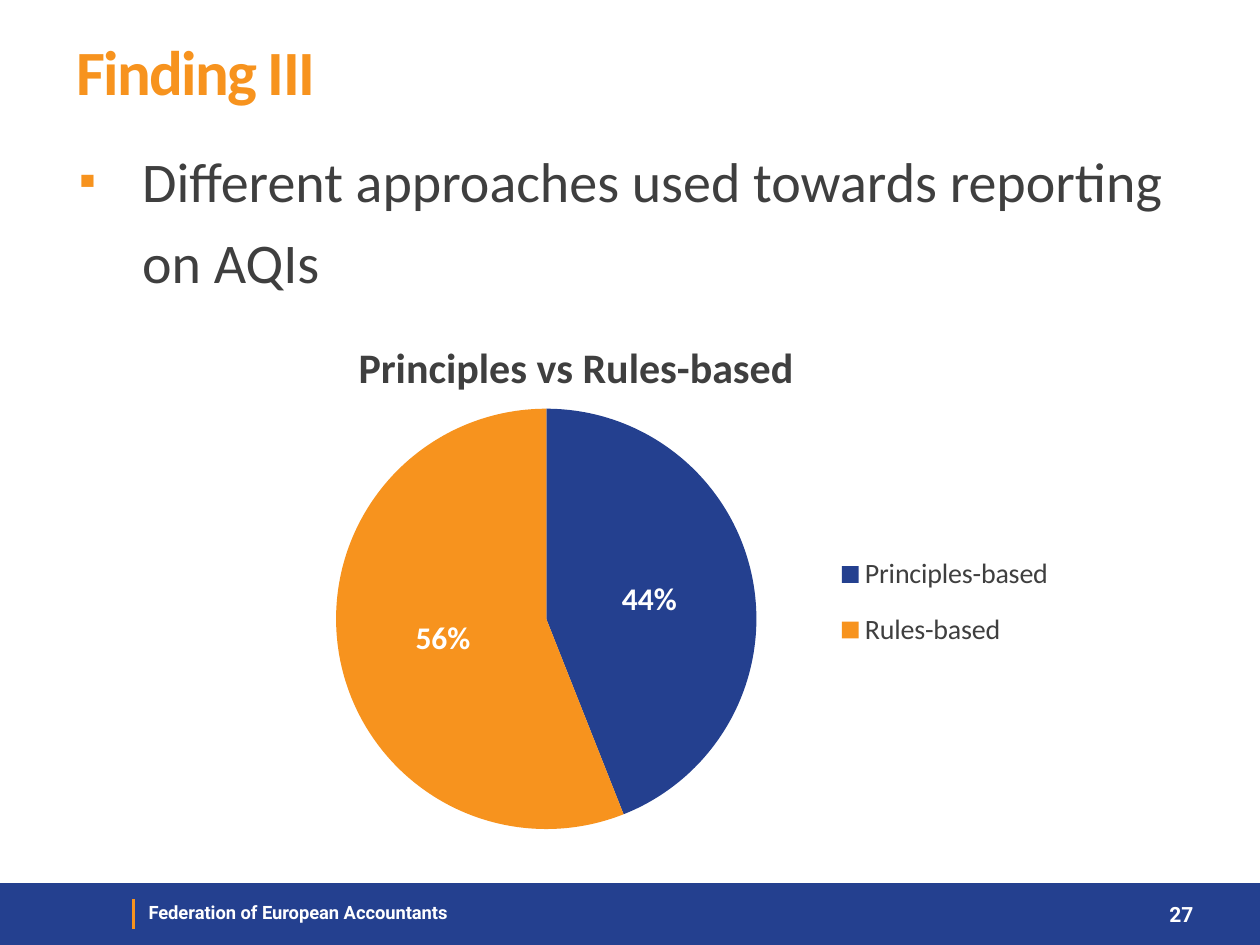
import pptx
import pptx.chart.data
import pptx.dml.color
import pptx.enum.chart
import pptx.enum.shapes
import pptx.enum.text
import pptx.oxml
import pptx.oxml.ns
import pptx.util
from pptx.util import Pt

BLUE = pptx.dml.color.RGBColor(0x24, 0x40, 0x8F)
ORANGE = pptx.dml.color.RGBColor(0xF7, 0x93, 0x1E)
GREY = pptx.dml.color.RGBColor(0x3F, 0x3F, 0x3F)
WHITE = pptx.dml.color.RGBColor(0xFF, 0xFF, 0xFF)


def make_element(tag, **attributes):
    element = pptx.oxml.parse_xml(f"<{tag} {pptx.oxml.ns.nsdecls(tag.split(':')[0])}/>")
    for name, value in attributes.items():
        element.set(name, str(value))
    return element


def set_font(font, size, color, bold=False, name="Calibri"):
    font.name = name
    font.size = Pt(size)
    font.bold = bold
    font.color.rgb = color


def add_text(page, text, left, top, width, height, size, color, bold=False,
             name="Calibri", anchor=pptx.enum.text.MSO_ANCHOR.TOP):
    box = page.shapes.add_textbox(Pt(left), Pt(top), Pt(width), Pt(height))
    frame = box.text_frame
    frame.word_wrap = True
    frame.vertical_anchor = anchor
    para = frame.paragraphs[0]
    span = para.add_run()
    span.text = text
    set_font(span.font, size, color, bold, name)
    return para


def add_bullet(para, indent):
    properties = para._p.get_or_add_pPr()
    properties.set("marL", str(Pt(indent)))
    properties.set("indent", str(-Pt(indent)))
    bullet_color = make_element("a:buClr")
    bullet_color.append(make_element("a:srgbClr", val=ORANGE))
    properties.append(bullet_color)
    properties.append(make_element("a:buSzPct", val=85000))
    properties.append(make_element("a:buFont", typeface="Calibri"))
    properties.append(make_element("a:buChar", char="▪"))
    para.line_spacing = 1.2
    para.space_after = Pt(18)


def add_footer(page):
    band = page.shapes.add_shape(
        pptx.enum.shapes.MSO_SHAPE.RECTANGLE, Pt(0), Pt(504.7), Pt(720), Pt(35.3))
    band.shadow.inherit = False
    band.fill.solid()
    band.fill.fore_color.rgb = BLUE
    band.line.fill.background()
    add_text(page, "Federation of European Accountants", 77.8, 511.2, 266.4, 20.9,
             10.5, WHITE, True, "Roboto")
    divider = page.shapes.add_connector(
        pptx.enum.shapes.MSO_CONNECTOR.STRAIGHT, Pt(76.3), Pt(514), Pt(76.3), Pt(530.6))
    divider.line.color.rgb = ORANGE
    divider.line.width = Pt(1.5)
    divider._element.spPr.append(make_element("a:effectLst"))
    number = add_text(page, "27", 643.7, 504.7, 45.4, 35.3, 12, WHITE, True, "Roboto",
                      pptx.enum.text.MSO_ANCHOR.MIDDLE)
    number.alignment = pptx.enum.text.PP_ALIGN.RIGHT


def set_layout(parent, position, inner=False, **fractions):
    for old in parent.findall(pptx.oxml.ns.qn("c:layout")):
        parent.remove(old)
    layout = make_element("c:layout")
    manual = make_element("c:manualLayout")
    layout.append(manual)
    if inner:
        manual.append(make_element("c:layoutTarget", val="inner"))
    for axis in "xy":
        manual.append(make_element(f"c:{axis}Mode", val="edge"))
    for side, fraction in fractions.items():
        manual.append(make_element(f"c:{side}", val=fraction))
    parent.insert(position, layout)


def add_pie(page):
    data = pptx.chart.data.CategoryChartData(number_format="General")
    data.categories = ["Principles-based", "Rules-based"]
    data.add_series("Series 1", (44, 56))
    chart = page.shapes.add_chart(
        pptx.enum.chart.XL_CHART_TYPE.PIE,
        Pt(144.7), Pt(173.5), Pt(465.1), Pt(316.1), data).chart
    set_font(chart.font, 10, GREY)

    chart.has_title = True
    title = chart.chart_title
    span = title.text_frame.paragraphs[0].add_run()
    span.text = "Principles vs Rules-based"
    set_font(span.font, 24, GREY, True)
    title.include_in_layout = False
    set_layout(title._element, 1, x=0.12, y=0.05)

    chart.has_legend = True
    legend = chart.legend
    legend.position = pptx.enum.chart.XL_LEGEND_POSITION.RIGHT
    legend.include_in_layout = False
    set_font(legend.font, 16, GREY)
    set_layout(legend._element, 1, x=0.71, y=0.42, w=0.28, h=0.24)

    plot = chart.plots[0]
    plot.vary_by_categories = True
    for index, color in enumerate((BLUE, ORANGE)):
        fill = plot.series[0].points[index].format.fill
        fill.solid()
        fill.fore_color.rgb = color
    plot.has_data_labels = True
    labels = plot.data_labels
    labels.show_percentage = True
    labels.show_value = False
    labels.number_format = "0%"
    labels.number_format_is_linked = False
    labels.position = pptx.enum.chart.XL_LABEL_POSITION.CENTER
    set_font(labels.font, 18, WHITE, True)
    set_layout(chart._chartSpace.chart.plotArea, 0, True, x=0.1, y=0.19, w=0.52, h=0.76)


def main():
    deck = pptx.Presentation()
    deck.slide_width, deck.slide_height = Pt(720), Pt(540)
    page = deck.slides.add_slide(deck.slide_layouts[6])
    add_footer(page)
    title = add_text(page, "Finding III", 36.7, 1.4, 648, 77.8, 36, ORANGE, True,
                     anchor=pptx.enum.text.MSO_ANCHOR.MIDDLE)
    title.runs[0].font._element.set("spc", "-100")
    body = add_text(page, "Different approaches used towards reporting on AQIs",
                    38.2, 72.7, 648, 115.9, 32, GREY)
    add_bullet(body, 36)
    add_pie(page)
    deck.save("out.pptx")


if __name__ == "__main__":
    main()
